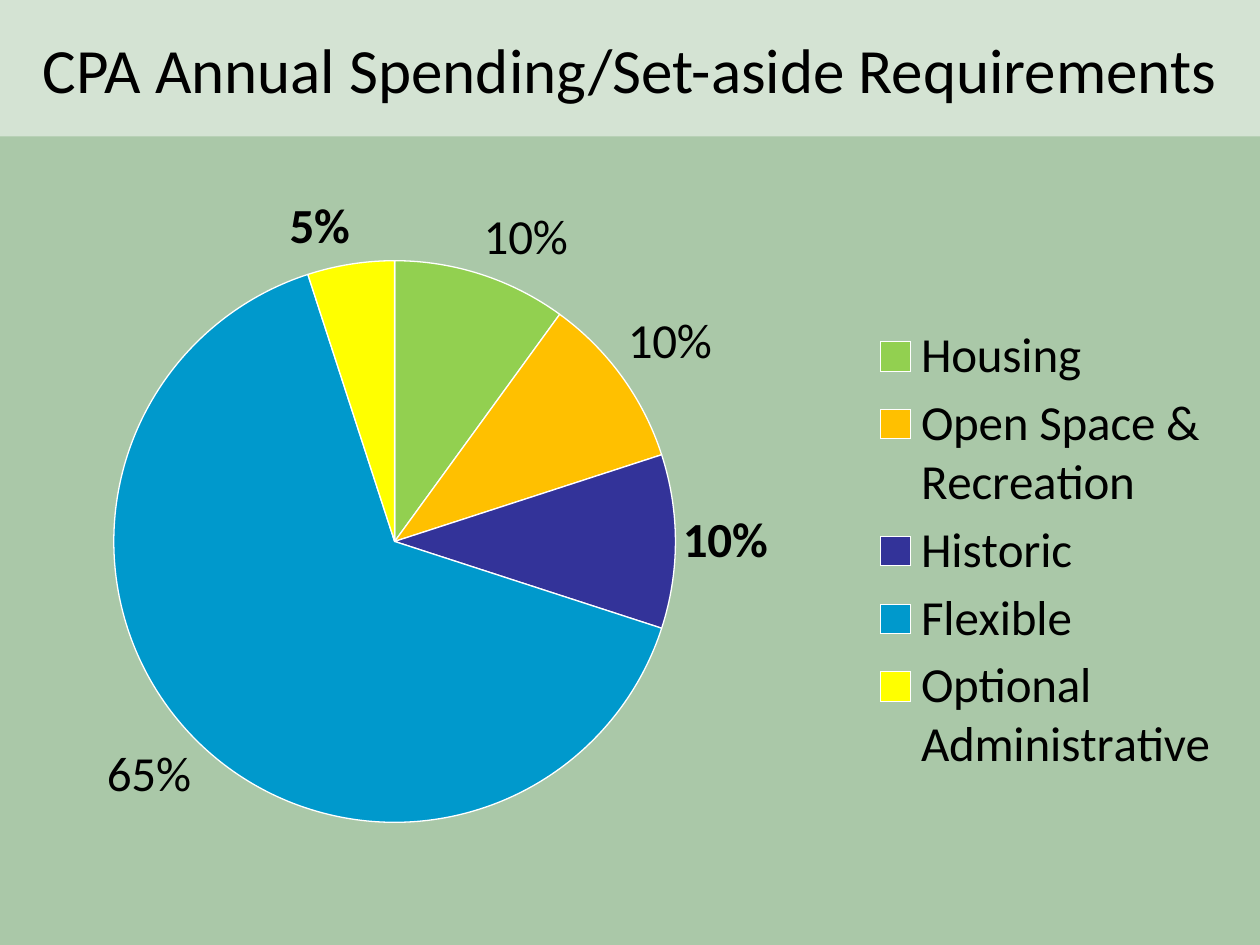
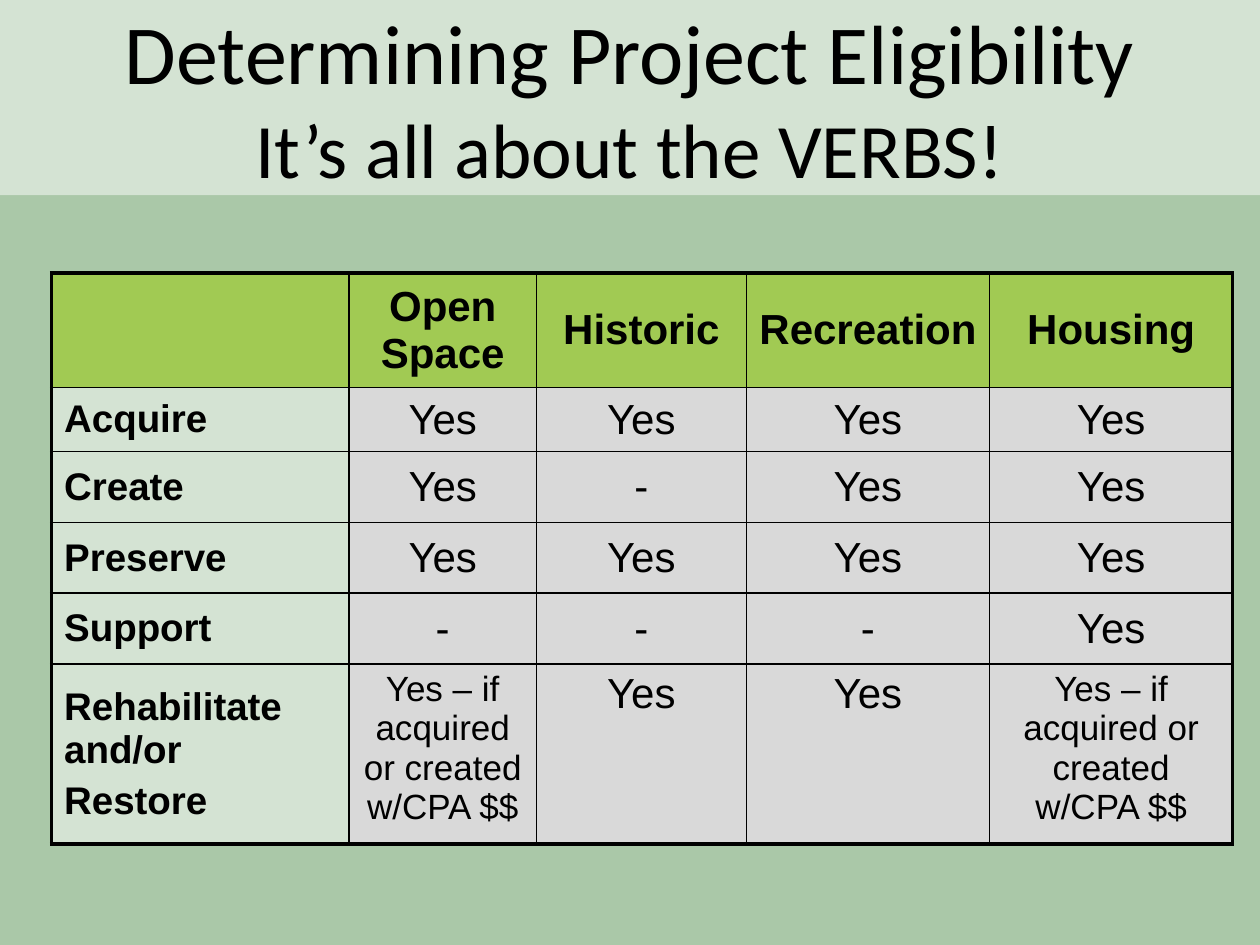
"""Build two slides on spending requirements and project eligibility."""
from pptx import Presentation
from pptx.chart.data import CategoryChartData
from pptx.dml.color import RGBColor
from pptx.enum.chart import XL_CHART_TYPE, XL_LABEL_POSITION, XL_LEGEND_POSITION
from pptx.enum.text import MSO_ANCHOR, MSO_AUTO_SIZE, PP_ALIGN
from pptx.oxml import parse_xml
from pptx.oxml.ns import nsdecls, qn
from pptx.util import Pt

COLORS = {
    "background": "AAC8A8", "text": "000000", "white": "FFFFFF",
    "header": "99CC00", "answer": "D9D9D9",
    "housing": "92D050", "open space": "FFC000", "historic": "333399",
    "flexible": "0099CC", "administrative": "FFFF00",
}
SLIDE_WIDTH, SLIDE_HEIGHT = 720, 540

SPENDING_TITLE = [("CPA Annual Spending/Set-aside Requirements", 36)]
SPENDING = [
    ("Housing", 10, "housing", "10%"),
    ("Open Space & Recreation", 10, "open space", "10%"),
    ("Historic", 10, "historic", None),
    ("Flexible", 65, "flexible", "65%"),
    ("Optional Administrative", 5, "administrative", None),
]
CHART_BOX = (-84, 102, 858, 390)
PIE_BOX = (65, 149, 321, 321)
LEGEND_BOX = (495, 182, 205, 266)

ELIGIBILITY_TITLE = [("Determining Project Eligibility", 48),
                     ("It’s all about the VERBS!", 44)]
CONDITION = "Yes – if acquired or created w/CPA $$"
ELIGIBILITY = [
    ["", "Open Space", "Historic", "Recreation", "Housing"],
    ["Acquire", "Yes", "Yes", "Yes", "Yes"],
    ["Create", "Yes", "-", "Yes", "Yes"],
    ["Preserve", "Yes", "Yes", "Yes", "Yes"],
    ["Support", "-", "-", "-", "Yes"],
    ["Rehabilitate and/or\nRestore", CONDITION, "Yes", "Yes", CONDITION],
]
TABLE_LEFT, TABLE_TOP = 29.5, 156
COLUMN_WIDTHS = [170, 107, 120, 139, 139]
ROW_HEIGHTS = [65.5, 36.5, 40.5, 40.5, 40.5, 103]


def color(name):
    return RGBColor.from_string(COLORS[name])


def set_font(font, size, name="Calibri", bold=False):
    font.size, font.name, font.bold = Pt(size), name, bold
    font.color.rgb = color("text")


def fill_with(item, element, name, opacity=100):
    item.fill.solid()
    item.fill.fore_color.rgb = color(name)
    if opacity < 100:
        rgb = element.find(qn("a:solidFill")).find(qn("a:srgbClr"))
        rgb.append(parse_xml(f'<a:alpha {nsdecls("a")} val="{opacity * 1000}"/>'))


def add_titled_slide(deck, lines, band_height):
    slide = deck.slides.add_slide(deck.slide_layouts[5])
    title = slide.shapes.title
    title.left, title.top = Pt(0), Pt(0)
    title.width, title.height = Pt(SLIDE_WIDTH), Pt(band_height)
    fill_with(title, title.element.spPr, "white", 50)
    frame = title.text_frame
    frame.text = "\n".join(text for text, size in lines)
    frame.word_wrap = True
    frame.auto_size = MSO_AUTO_SIZE.NONE
    frame.vertical_anchor = MSO_ANCHOR.MIDDLE
    for para, (text, size) in zip(frame.paragraphs, lines):
        para.alignment = PP_ALIGN.CENTER
        set_font(para.font, size)
    return slide


def chart_layout(box, target=""):
    left, top, width, height = CHART_BOX
    places = {"x": (box[0] - left) / width, "y": (box[1] - top) / height,
              "w": box[2] / width, "h": box[3] / height}
    values = "".join(f'<c:{key} val="{value:.4f}"/>' for key, value in places.items())
    return parse_xml(
        f'<c:layout {nsdecls("c")}><c:manualLayout>{target}'
        f'<c:xMode val="edge"/><c:yMode val="edge"/>{values}'
        '</c:manualLayout></c:layout>')


def place_chart_parts(chart):
    plot_area = next(chart._chartSpace.iter(qn("c:plotArea")))
    legend = next(chart._chartSpace.iter(qn("c:legend")))
    for parent in (plot_area, legend):
        for layout in parent.findall(qn("c:layout")):
            parent.remove(layout)
    plot_area.insert(0, chart_layout(PIE_BOX, '<c:layoutTarget val="inner"/>'))
    legend.find(qn("c:legendPos")).addnext(chart_layout(LEGEND_BOX))


def add_spending_pie(slide):
    data = CategoryChartData()
    data.categories = [name for name, *rest in SPENDING]
    data.add_series("Series 1", [share for name, share, *rest in SPENDING])
    chart = slide.shapes.add_chart(
        XL_CHART_TYPE.PIE, *map(Pt, CHART_BOX), data).chart
    chart.has_title = False
    set_font(chart.font, 18, "Arial")
    chart.has_legend = True
    chart.legend.position = XL_LEGEND_POSITION.RIGHT
    chart.legend.include_in_layout = False
    set_font(chart.legend.font, 28)
    plot = chart.plots[0]
    plot.vary_by_categories = True
    series = plot.series[0]
    labels = series.data_labels
    labels.show_percentage, labels.show_value = True, False
    labels.number_format, labels.number_format_is_linked = "0%", False
    labels.position = XL_LABEL_POSITION.OUTSIDE_END
    set_font(labels.font, 28, bold=True)
    for index, (name, share, slice_color, label_text) in enumerate(SPENDING):
        point = series.points[index]
        point.format.fill.solid()
        point.format.fill.fore_color.rgb = color(slice_color)
        point.format.line.color.rgb = color("white")
        point.format.line.width = Pt(0.75)
        if label_text:
            span = point.data_label.text_frame.paragraphs[0].add_run()
            span.text = label_text
            set_font(span.font, 28)
            point.data_label.position = XL_LABEL_POSITION.OUTSIDE_END
    place_chart_parts(chart)


def set_borders(cell, outer_sides):
    properties = cell._tc.get_or_add_tcPr()
    for side in "LRTB":
        width = Pt(2.25 if side in outer_sides else 1)
        properties.append(parse_xml(
            f'<a:ln{side} {nsdecls("a")} w="{width}"><a:solidFill>'
            f'<a:srgbClr val="{COLORS["text"]}"/></a:solidFill></a:ln{side}>'))


def format_cell(cell, text, row, column):
    last_row, last_column = len(ROW_HEIGHTS) - 1, len(COLUMN_WIDTHS) - 1
    edges = {"L": column == 0, "R": column == last_column,
             "T": row == 0, "B": row == last_row}
    set_borders(cell, [side for side, outer in edges.items() if outer])
    properties = cell._tc.tcPr
    if row == 0:
        fill_with(cell, properties, "header", 50)
    elif column == 0:
        fill_with(cell, properties, "white", 50)
    else:
        fill_with(cell, properties, "answer")
    top_aligned = row == last_row and column > 0
    cell.vertical_anchor = MSO_ANCHOR.TOP if top_aligned else MSO_ANCHOR.MIDDLE
    cell.text = text
    size = 20 if text == CONDITION else 22 if column == 0 else 24
    for index, para in enumerate(cell.text_frame.paragraphs):
        para.alignment = PP_ALIGN.CENTER if column else PP_ALIGN.LEFT
        if index:
            para.space_before = Pt(4.4)
        set_font(para.font, size, "Arial", row == 0 or column == 0)


def add_eligibility_table(slide):
    table = slide.shapes.add_table(
        len(ROW_HEIGHTS), len(COLUMN_WIDTHS), Pt(TABLE_LEFT), Pt(TABLE_TOP),
        Pt(sum(COLUMN_WIDTHS)), Pt(sum(ROW_HEIGHTS))).table
    table.first_row = table.horz_banding = False
    for column, width in zip(table.columns, COLUMN_WIDTHS):
        column.width = Pt(width)
    for row, height in zip(table.rows, ROW_HEIGHTS):
        row.height = Pt(height)
    for row, texts in enumerate(ELIGIBILITY):
        for column, text in enumerate(texts):
            format_cell(table.cell(row, column), text, row, column)


def main():
    deck = Presentation()
    deck.slide_width, deck.slide_height = Pt(SLIDE_WIDTH), Pt(SLIDE_HEIGHT)
    background = deck.slide_master.background.fill
    background.solid()
    background.fore_color.rgb = color("background")
    add_spending_pie(add_titled_slide(deck, SPENDING_TITLE, 78))
    add_eligibility_table(add_titled_slide(deck, ELIGIBILITY_TITLE, 111.5))
    deck.save("out.pptx")


if __name__ == "__main__":
    main()
